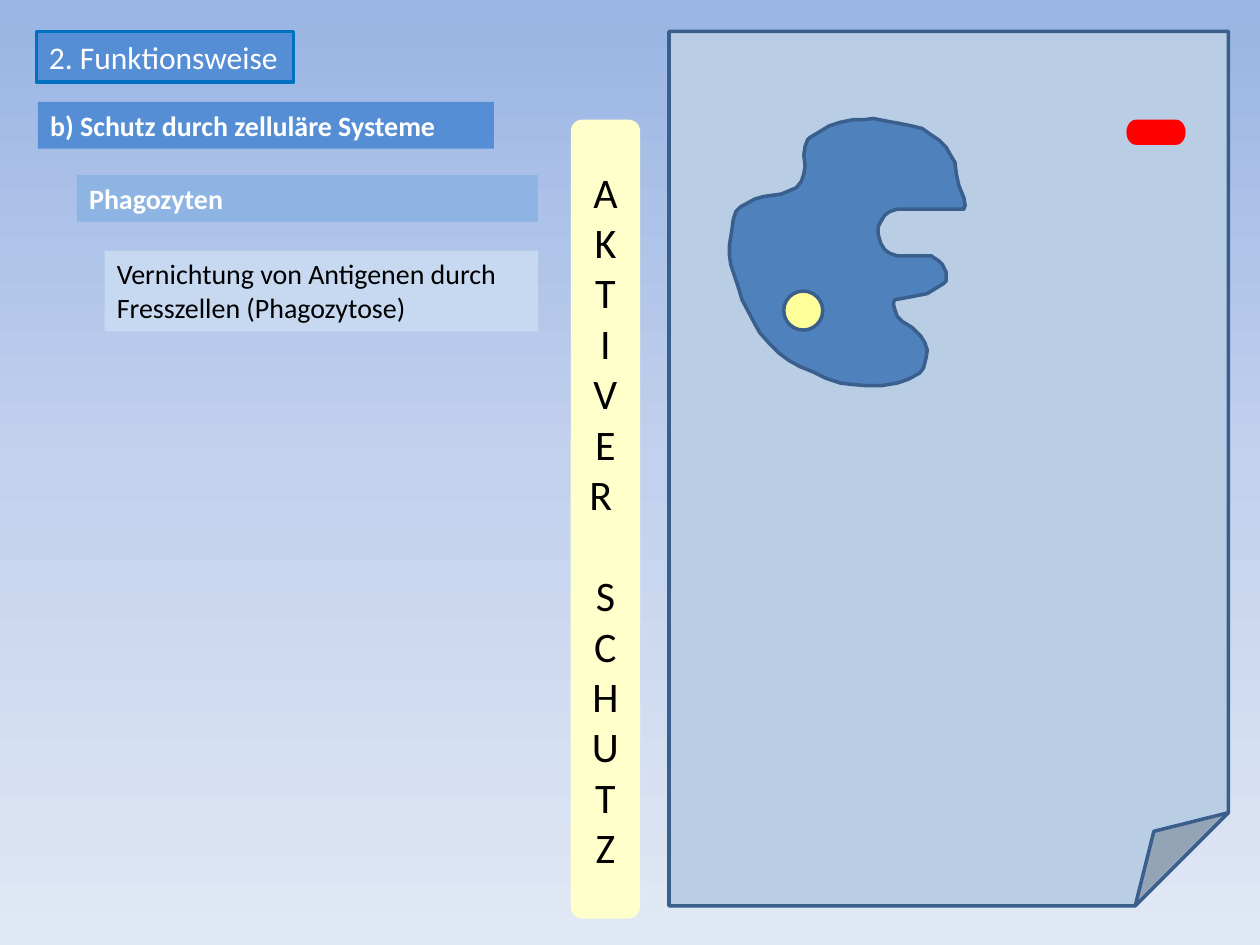
from copy import deepcopy
from pptx import Presentation
from pptx import util as u
from pptx.dml.color import RGBColor
from pptx.enum import shapes, text
from pptx.oxml.ns import qn

WHITE = RGBColor(0xFF, 0xFF, 0xFF)
BLACK = RGBColor(0x00, 0x00, 0x00)
OUTLINE = RGBColor(0x3A, 0x5F, 0x8C)
TITLE_LINE = RGBColor(0x00, 0x70, 0xC0)
HEADING_BLUE = RGBColor(0x55, 0x8E, 0xD5)
TOPIC_BLUE = RGBColor(0x8E, 0xB4, 0xE3)
DETAIL_BLUE = RGBColor(0xC6, 0xD9, 0xF1)
PAPER_BLUE = RGBColor(0xB9, 0xCD, 0xE5)
CELL_BLUE = RGBColor(0x4F, 0x81, 0xBD)
BANNER_YELLOW = RGBColor(0xFF, 0xFF, 0xCC)
NUCLEUS_YELLOW = RGBColor(0xFF, 0xFF, 0x99)
ANTIGEN_RED = RGBColor(0xFF, 0x00, 0x00)
SKY = [(0, RGBColor(0x9A, 0xB5, 0xE4)), (0.5, RGBColor(0xC2, 0xD1, 0xED)),
       (1, RGBColor(0xE1, 0xE8, 0xF5))]

presentation = Presentation()
presentation.slide_width, presentation.slide_height = u.Inches(10), u.Inches(7.5)
slide = presentation.slides.add_slide(presentation.slide_layouts[6])

# Square grid of 1000 columns by 750 rows; all lengths below are grid units
GRID = presentation.slide_width // 1000


def paint(shape, fill, line=None):
    shape.shadow.inherit = False
    shape.fill.solid()
    shape.fill.fore_color.rgb = fill
    if line is None:
        shape.line.fill.background()
    else:
        shape.line.color.rgb = line
        shape.line.width = u.Pt(2)


def add_preset(kind, place, fill, line=None):
    shape = slide.shapes.add_shape(kind, *(GRID * length for length in place))
    paint(shape, fill, line)
    return shape


# Background: vertical gradient with a third stop in the middle
background = slide.background.fill
background.gradient()
background.gradient_angle = 270
stop_list = slide.element.find(".//" + qn("a:gsLst"))
stop_list.insert(1, deepcopy(stop_list[0]))
for stop, (position, color) in zip(background.gradient_stops, SKY):
    stop.position = position
    stop.color.rgb = color

# Sheet of paper
add_preset(shapes.MSO_SHAPE.FOLDED_CORNER, (531, 25, 444, 694), PAPER_BLUE, OUTLINE)

# Phagocyte, clockwise from the top
phagocyte_outline = [
    (693, 94), (703, 96), (714, 98), (724, 100), (732, 102), (739, 107), (745, 111),
    (751, 117), (755, 124), (758, 129), (759, 138), (761, 147), (765, 157), (766, 163),
    (765, 166),
    # upper notch
    (712, 166), (706, 168), (702, 171), (699, 176), (697, 180), (697, 186), (699, 193),
    (702, 198), (706, 201), (712, 203), (739, 203),
    # middle arm
    (745, 207), (748, 210), (751, 216), (751, 223), (749, 225), (736, 233), (726, 235),
    (715, 237), (710, 238),
    # lower notch and arm
    (709, 241), (710, 245), (712, 251), (716, 255), (724, 260), (731, 267), (734, 272),
    (736, 278), (735, 284), (733, 292), (730, 296), (721, 301), (712, 304), (700, 306),
    # underside and back
    (687, 306), (675, 305), (667, 304), (655, 300), (645, 295), (635, 291), (626, 286),
    (618, 280), (611, 273), (603, 264), (598, 255), (589, 238), (586, 228), (583, 219),
    (580, 210), (579, 203), (579, 194), (581, 182), (582, 174), (584, 168), (588, 164),
    (599, 158), (606, 156), (620, 154), (632, 149), (636, 144), (638, 138), (639, 132),
    (638, 123), (639, 116), (641, 111), (643, 109), (658, 100), (667, 97), (677, 95),
    (686, 95),
]
builder = slide.shapes.build_freeform(*phagocyte_outline[0], scale=GRID)
builder.add_line_segments(phagocyte_outline[1:], close=True)
paint(builder.convert_to_shape(), CELL_BLUE, OUTLINE)

# Headings on the left
headings = [
    ("2. Funktionsweise", (29, 25, 204, 40), HEADING_BLUE, TITLE_LINE, 18, WHITE, False),
    ("b) Schutz durch zelluläre Systeme", (30, 81, 362, 37), HEADING_BLUE, None, 16, WHITE, True),
    ("Phagozyten", (61, 139, 366, 37), TOPIC_BLUE, None, 16, WHITE, True),
    ("Vernichtung von Antigenen durch Fresszellen (Phagozytose)", (83, 199, 344, 64),
     DETAIL_BLUE, None, 16, BLACK, False),
]
for words, place, fill, line, size, color, bold in headings:
    box = slide.shapes.add_textbox(*(GRID * length for length in place))
    paint(box, fill, line)
    box.text_frame.text = words
    box.text_frame.word_wrap = line is None
    box.text_frame.auto_size = text.MSO_AUTO_SIZE.SHAPE_TO_FIT_TEXT
    font = box.text_frame.paragraphs[0].runs[0].font
    font.name, font.size, font.bold = "Calibri", u.Pt(size), bold
    font.color.rgb = color

# Upright banner: so narrow that each letter wraps to its own line
banner = add_preset(shapes.MSO_SHAPE.ROUNDED_RECTANGLE, (453, 95, 55, 634), BANNER_YELLOW)
banner.text_frame.text = "AKT I VER \nSCHUTZ"
banner.text_frame.word_wrap = True
banner.text_frame.vertical_anchor = text.MSO_ANCHOR.MIDDLE
for paragraph in banner.text_frame.paragraphs:
    paragraph.alignment = text.PP_ALIGN.CENTER
    font = paragraph.runs[0].font
    font.name, font.size = "Calibri", u.Pt(24)
    font.color.rgb = BLACK
banner.text_frame.paragraphs[1].space_before = u.Pt(29)

# Antigen and cell nucleus
add_preset(shapes.MSO_SHAPE.FLOWCHART_TERMINATOR, (894, 95, 47, 20), ANTIGEN_RED)
add_preset(shapes.MSO_SHAPE.FLOWCHART_CONNECTOR, (622, 231, 31, 31), NUCLEUS_YELLOW, OUTLINE)

presentation.save("out.pptx")
